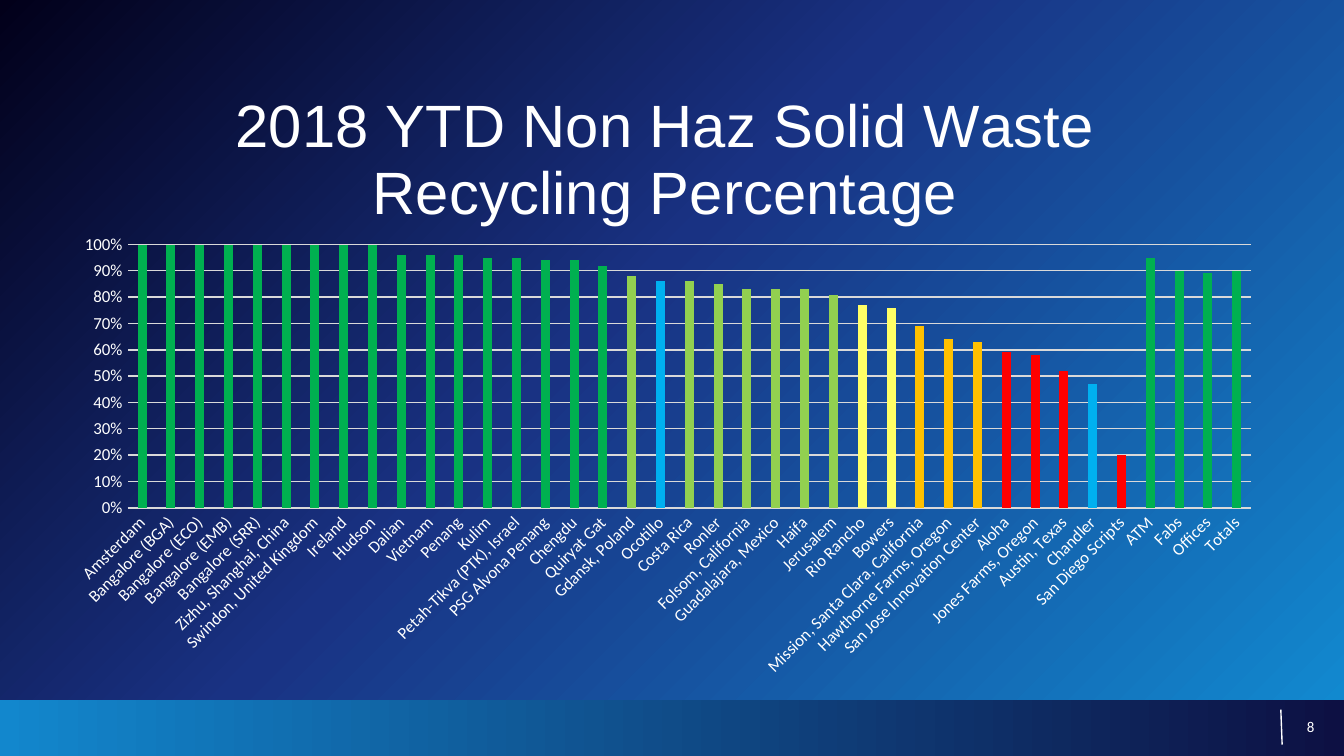
from copy import deepcopy

from lxml import etree
from pptx import Presentation
from pptx.chart.data import CategoryChartData
from pptx.dml.color import RGBColor
from pptx.enum.chart import XL_CHART_TYPE, XL_TICK_MARK
from pptx.enum.shapes import MSO_CONNECTOR, MSO_SHAPE
from pptx.enum.text import MSO_ANCHOR, PP_ALIGN
from pptx.oxml.ns import qn
from pptx.util import Inches, Pt

COLUMN = XL_CHART_TYPE.COLUMN_CLUSTERED
NO_TICK = XL_TICK_MARK.NONE
RECT = MSO_SHAPE.RECTANGLE
STRAIGHT = MSO_CONNECTOR.STRAIGHT
MIDDLE = MSO_ANCHOR.MIDDLE
RIGHT = PP_ALIGN.RIGHT

COLORS = {
    "night": "02001A", "navy": "193283", "sky": "118DD3",
    "bar": "1287CD", "dusk": "0D1043", "white": "FFFFFF", "grid": "D9D9D9",
    "green": "00B050", "lime": "92D050", "blue": "00B0F0",
    "yellow": "FFFF66", "amber": "FFC000", "red": "FF0000",
}
RGB = {name: RGBColor.from_string(code) for name, code in COLORS.items()}

# Site, recycled share, column colour
SITES = [
    ("Amsterdam", 1, "green"),
    ("Bangalore (BGA)", 1, "green"),
    ("Bangalore (ECO)", 1, "green"),
    ("Bangalore (EMB)", 1, "green"),
    ("Bangalore (SRR)", 1, "green"),
    ("Zizhu, Shanghai, China", 1, "green"),
    ("Swindon, United Kingdom", 1, "green"),
    ("Ireland", 1, "green"),
    ("Hudson", 1, "green"),
    ("Dalian", 0.96, "green"),
    ("Vietnam", 0.96, "green"),
    ("Penang", 0.96, "green"),
    ("Kulim", 0.95, "green"),
    ("Petah-Tikva (PTK), Israel", 0.95, "green"),
    ("PSG Alvona Penang", 0.94, "green"),
    ("Chengdu", 0.94, "green"),
    ("Quiryat Gat", 0.92, "green"),
    ("Gdansk, Poland", 0.88, "lime"),
    ("Ocotillo", 0.86, "blue"),
    ("Costa Rica", 0.86, "lime"),
    ("Ronler", 0.85, "lime"),
    ("Folsom, California", 0.83, "lime"),
    ("Guadalajara, Mexico", 0.83, "lime"),
    ("Haifa", 0.83, "lime"),
    ("Jerusalem", 0.81, "lime"),
    ("Rio Rancho", 0.77, "yellow"),
    ("Bowers", 0.76, "yellow"),
    ("Mission, Santa Clara, California", 0.69, "amber"),
    ("Hawthorne Farms, Oregon", 0.64, "amber"),
    ("San Jose Innovation Center", 0.63, "amber"),
    ("Aloha", 0.59, "red"),
    ("Jones Farms, Oregon", 0.58, "red"),
    ("Austin, Texas", 0.52, "red"),
    ("Chandler", 0.47, "blue"),
    ("San Diego Scripts", 0.2, "red"),
    ("ATM", 0.95, "green"),
    ("Fabs", 0.9, "green"),
    ("Offices", 0.89, "green"),
    ("Totals", 0.9, "green"),
]


def blend(fill, node, stops, angle):
    """Give a fill inside node a linear gradient of (position, colour) stops."""
    fill.gradient()
    fill.gradient_angle = angle
    group = next(node.iter(qn("a:gsLst")))
    while len(group) < len(stops):
        group.append(deepcopy(group[0]))
    for stop, (place, color) in zip(fill.gradient_stops, stops):
        stop.position = place
        stop.color.rgb = RGB[color]


def style(font, size, name="Calibri"):
    for key, value in {"size": Pt(size), "name": name, "bold": False}.items():
        setattr(font, key, value)
    font.color.rgb = RGB["white"]


deck = Presentation()
deck.slide_width = Inches(10)
deck.slide_height = deck.slide_width * 9 // 16
slide = deck.slides.add_slide(deck.slide_layouts[6])
blend(slide.background.fill, slide.background._cSld,
      [(0, "night"), (0.44, "navy"), (1, "sky")], 315)

# Footer
foot = slide.shapes.add_shape(RECT, 0, Inches(5.21), Inches(10), Inches(0.42))
foot.shadow.inherit = False
foot.line.fill.background()
blend(foot.fill, foot._element.spPr, [(0, "bar"), (1, "dusk")], 0)

rule = slide.shapes.add_connector(
    STRAIGHT, Inches(9.53), Inches(5.28), Inches(9.54), Inches(5.54))
rule.line.color.rgb = RGB["white"]
rule.line.width = Pt(0.75)
etree.SubElement(rule._element.spPr, qn("a:effectLst"))

box = slide.shapes.add_textbox(
    Inches(9.41), Inches(5.26), Inches(0.37), Inches(0.3))
frame = box.text_frame
for key, value in {
    "word_wrap": True, "vertical_anchor": MIDDLE, "margin_left": 0,
    "margin_right": 0, "margin_top": 0, "margin_bottom": 0,
}.items():
    setattr(frame, key, value)
para = frame.paragraphs[0]
para.alignment = RIGHT
run = para.add_run()
run.text = "8"
style(run.font, 8)

# Chart
names, shares, hues = zip(*SITES)
data = CategoryChartData(number_format="0%")
data.categories = names
data.add_series("Series 1", shares)
wide, high = 9.08, 4.72
chart = slide.shapes.add_chart(
    COLUMN, Inches(0.41), Inches(0.41), Inches(wide), Inches(high), data).chart
chart.has_legend = False
chart.font.size = Pt(10)
chart.font.name = "Calibri"

chart.has_title = True
head = chart.chart_title.text_frame.paragraphs[0]
title = head.add_run()
title.text = "2018 YTD Non Haz Solid Waste Recycling Percentage"
for font in (head.font, title.font):
    style(font, 32, "Arial")
chart.chart_title.include_in_layout = False

plot = chart.plots[0]
for key, value in {
    "gap_width": 219, "overlap": -27, "vary_by_categories": False,
}.items():
    setattr(plot, key, value)
series = plot.series[0]
series.format.fill.solid()
series.format.fill.fore_color.rgb = RGB["green"]
for i, hue in enumerate(hues):
    if hue != "green":
        fill = series.points[i].format.fill
        fill.solid()
        fill.fore_color.rgb = RGB[hue]

sites, share = chart.category_axis, chart.value_axis
for axis in (sites, share):
    axis.major_tick_mark = NO_TICK
    axis.minor_tick_mark = NO_TICK
    style(axis.tick_labels.font, 9)
share.minimum_scale = 0
share.maximum_scale = 1
share.major_unit = 0.1
share.tick_labels.number_format = "0%"
share.tick_labels.number_format_is_linked = False
share.has_major_gridlines = True
share.format.line.fill.background()
for line in (sites.format.line, share.major_gridlines.format.line):
    line.color.rgb = RGB["grid"]
    line.width = Pt(0.75)
turn = next(sites._element.iter(qn("a:bodyPr")))
turn.set("rot", "-2700000")
turn.set("vert", "horz")

# Fixed inner plot area, as fractions of the chart
area = chart._chartSpace.chart.plotArea
for old in area.findall(qn("c:layout")):
    area.remove(old)
layout = etree.Element(qn("c:layout"))
area.insert(0, layout)
manual = etree.SubElement(layout, qn("c:manualLayout"))
for tag, value in {
    "layoutTarget": "inner", "xMode": "edge", "yMode": "edge",
    "x": 0.54 / wide, "y": 1.41 / high, "w": 8.36 / wide, "h": 1.96 / high,
}.items():
    etree.SubElement(manual, qn("c:" + tag)).set("val", str(value))

deck.save("out.pptx")
